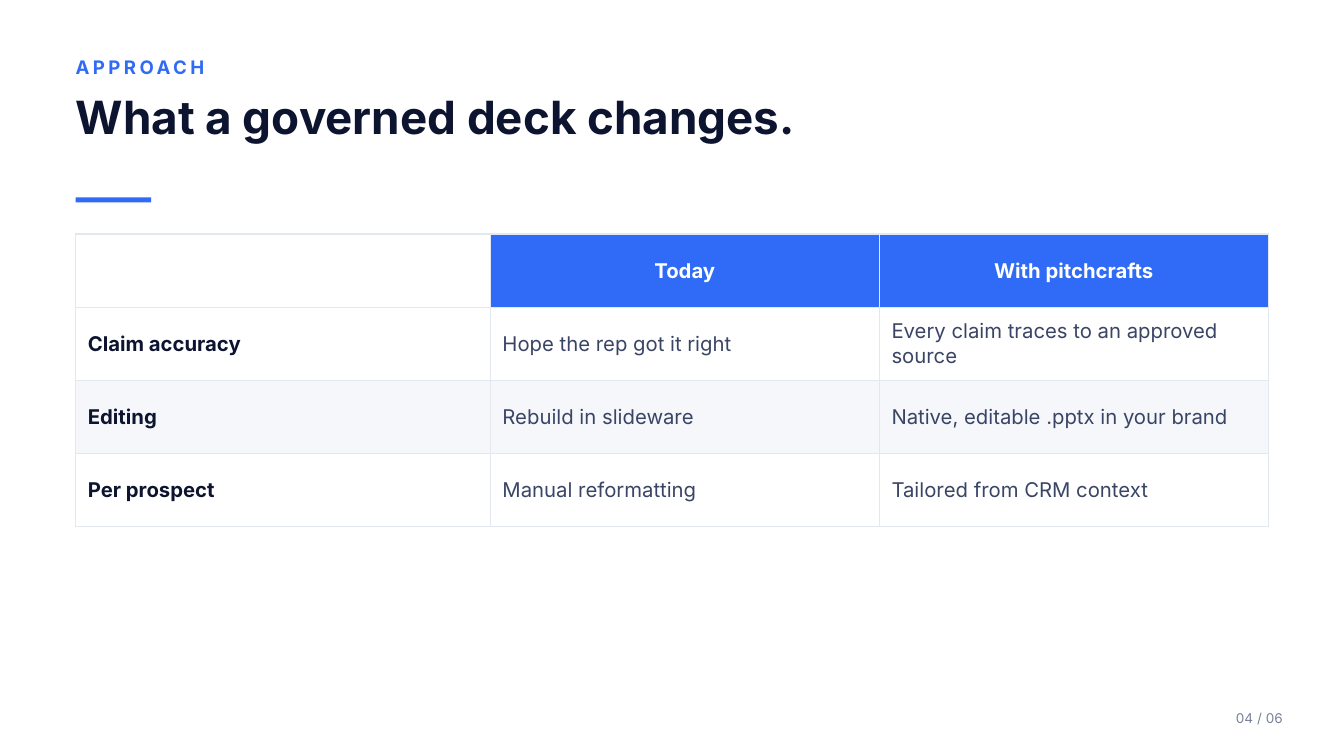
from lxml.etree import SubElement
from pptx import Presentation
from pptx.dml.color import RGBColor
from pptx.enum.shapes import MSO_SHAPE
from pptx.enum.text import MSO_ANCHOR, MSO_AUTO_SIZE, PP_ALIGN
from pptx.oxml.ns import qn
from pptx.util import Inches, Pt

KICKER = "APPROACH"
TITLE = "What a governed deck changes."
PAGE = "04 / 06"
ROWS = [
    ("", "Today", "With pitchcrafts"),
    ("Claim accuracy", "Hope the rep got it right", "Every claim traces to an approved source"),
    ("Editing", "Rebuild in slideware", "Native, editable .pptx in your brand"),
    ("Per prospect", "Manual reformatting", "Tailored from CRM context"),
]
COLORS = {
    "blue": "2F6BF6", "ink": "0C1430", "body": "3A4566", "muted": "7A8298",
    "rule": "E3E7EF", "band": "F5F7FB", "white": "FFFFFF",
}
FONT = "Inter"
LEFT, WIDTH = 0.62, 9.78
COLS = (3.4, 3.19, 3.19)
ROW = 0.6


def color(name):
    return RGBColor.from_string(COLORS[name])


def write(frame, text, size, tint, bold=False, align=PP_ALIGN.LEFT):
    para = frame.paragraphs[0]
    para.alignment = align
    run = para.add_run()
    run.text = text
    run.font.name = FONT
    run.font.size = Pt(size)
    run.font.bold = bold
    run.font.color.rgb = color(tint)
    return run


def setup(frame, anchor):
    frame.margin_left = frame.margin_right = frame.margin_top = frame.margin_bottom = 0
    frame.word_wrap = True
    frame.auto_size = MSO_AUTO_SIZE.NONE
    frame.vertical_anchor = anchor


def label(slide, box, *args, **style):
    frame = slide.shapes.add_textbox(*map(Inches, box)).text_frame
    setup(frame, MSO_ANCHOR.MIDDLE)
    return write(frame, *args, **style)


def border(cell):
    props = cell._tc.get_or_add_tcPr()
    for side in ("lnL", "lnR", "lnT", "lnB"):
        line = SubElement(props, qn(f"a:{side}"), w=str(Pt(1)))
        fill = SubElement(line, qn("a:solidFill"))
        SubElement(fill, qn("a:srgbClr"), val=COLORS["rule"])


def style(row, col):
    if row == 0:
        return ("blue" if col else "white"), "white", True, PP_ALIGN.CENTER
    back = "white" if row % 2 else "band"
    return back, ("body" if col else "ink"), col == 0, PP_ALIGN.LEFT


def main():
    deck = Presentation()
    deck.slide_width, deck.slide_height = Inches(11.02), Inches(6.2)
    slide = deck.slides.add_slide(deck.slide_layouts[5])
    slide.background.fill.solid()
    slide.background.fill.fore_color.rgb = color("white")

    kicker = label(slide, (LEFT, 0.42, WIDTH, 0.26), KICKER, 11, "blue", bold=True)
    kicker.font._element.set("spc", "200")

    title = slide.shapes.title
    title.left, title.top, title.width, title.height = map(Inches, (LEFT, 0.72, WIDTH, 0.95))
    setup(title.text_frame, MSO_ANCHOR.TOP)
    write(title.text_frame, TITLE, 27, "ink", bold=True)
    title.text_frame.paragraphs[0].line_spacing = 1.02

    accent = slide.shapes.add_shape(MSO_SHAPE.RECTANGLE, *map(Inches, (LEFT, 1.62, 0.62, 0.04)))
    accent.shadow.inherit = False
    accent.fill.solid()
    accent.fill.fore_color.rgb = color("blue")
    accent.line.fill.background()

    size = (LEFT, 1.92, WIDTH, ROW * len(ROWS))
    table = slide.shapes.add_table(len(ROWS), len(COLS), *map(Inches, size)).table
    for col, width in enumerate(COLS):
        table.columns[col].width = Inches(width)
    for row, texts in enumerate(ROWS):
        table.rows[row].height = Inches(ROW)
        for col, text in enumerate(texts):
            cell = table.cell(row, col)
            back, tint, bold, align = style(row, col)
            border(cell)
            cell.fill.solid()
            cell.fill.fore_color.rgb = color(back)
            cell.vertical_anchor = MSO_ANCHOR.MIDDLE
            if text:
                write(cell.text_frame, text, 12, tint, bold, align)

    label(slide, (9.52, 5.78, 1, 0.22), PAGE, 8, "muted", align=PP_ALIGN.RIGHT)
    deck.save("out.pptx")


if __name__ == "__main__":
    main()
